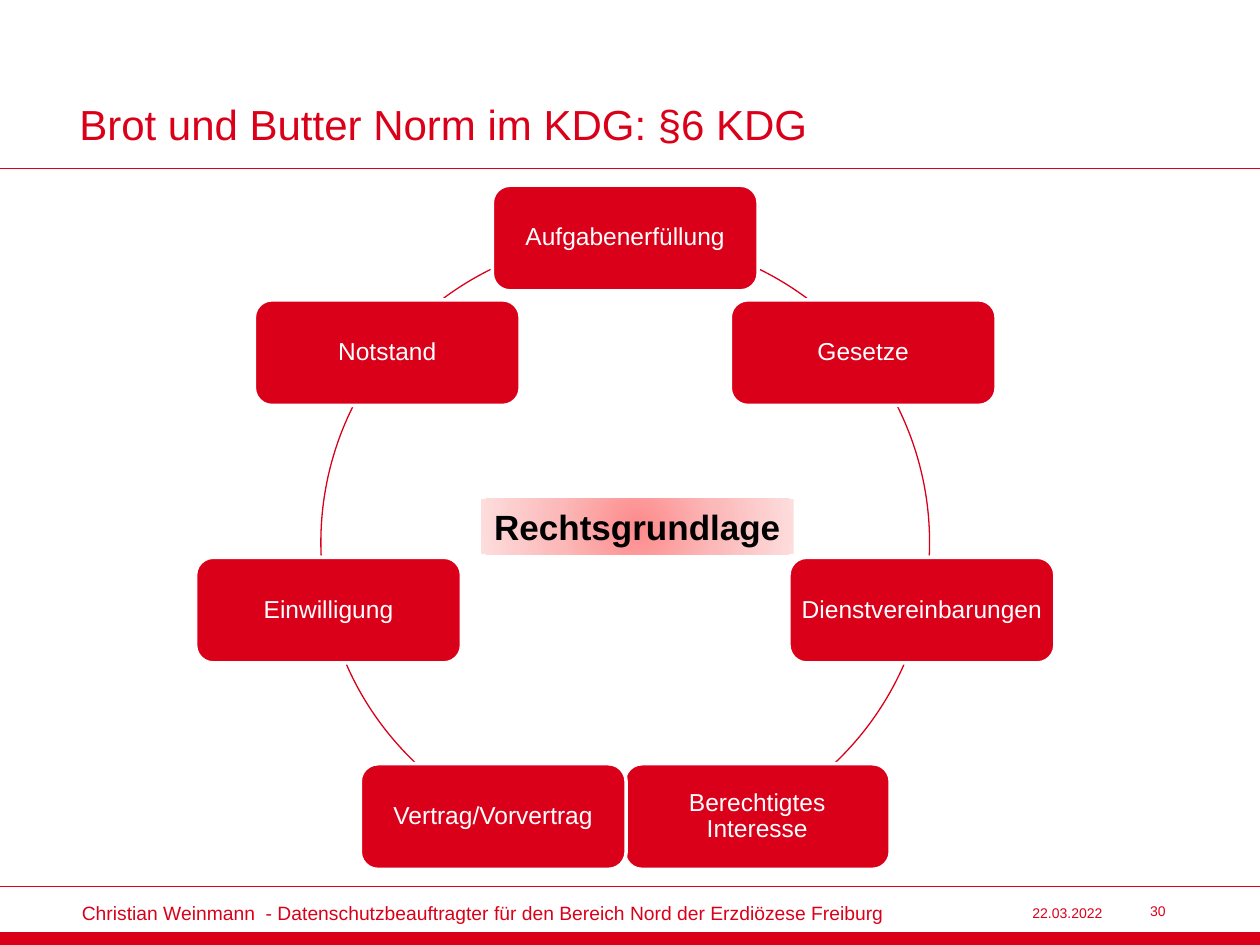
from math import cos, pi, sin

from lxml.etree import SubElement
from pptx import Presentation
from pptx.dml.color import RGBColor
from pptx.enum.shapes import MSO_CONNECTOR, MSO_SHAPE
from pptx.enum.text import MSO_ANCHOR, PP_ALIGN
from pptx.oxml import parse_xml
from pptx.oxml.ns import nsdecls, qn
from pptx.util import Cm, Pt

RED = RGBColor(0xDA, 0x00, 0x1A)
WHITE = RGBColor(0xFF, 0xFF, 0xFF)
BLACK = RGBColor(0x00, 0x00, 0x00)
GLOW = [
    (0, RGBColor(0xFD, 0x8A, 0x8B)),
    (50, RGBColor(0xFC, 0xB9, 0xB9)),
    (100, RGBColor(0xFD, 0xDD, 0xDD)),
]

WIDTH, HEIGHT = 25.4, 19.05
NODE_W, NODE_H = 5.36, 2.13
NODES = [
    "Aufgabenerfüllung",
    "Gesetze",
    "Dienstvereinbarungen",
    "Berechtigtes Interesse",
    "Vertrag/Vorvertrag",
    "Einwilligung",
    "Notstand",
]
RIGHT_ARCS = [(295.9, 306.75), (333.5, 2.5), (23.6, 46.3)]


def write(sp, text, size=14, color=RED, bold=False, align=PP_ALIGN.LEFT,
          anchor=MSO_ANCHOR.MIDDLE, insets=(0.25, 0.13, 0.25, 0.13),
          spacing=None, wrap=True):
    """Fill a shape with one formatted paragraph."""
    tf = sp.text_frame
    tf.word_wrap = wrap
    tf.vertical_anchor = anchor
    tf.margin_left, tf.margin_top, tf.margin_right, tf.margin_bottom = map(Cm, insets)
    p = tf.paragraphs[0]
    p.alignment = align
    p.line_spacing = spacing
    r = p.add_run()
    r.text = text
    r.font.name = "Arial"
    r.font.size = Pt(size)
    r.font.bold = bold
    r.font.color.rgb = color


def add_text(s, box, text, **fmt):
    """Place a text box."""
    write(s.shapes.add_textbox(*map(Cm, box)), text, **fmt)


def add_shape(s, kind, box, fill=None, line=None, weight=0.75):
    """Place a preset shape without a shadow."""
    sp = s.shapes.add_shape(kind, *map(Cm, box))
    sp.shadow.inherit = False
    if fill is None:
        sp.fill.background()
    else:
        sp.fill.solid()
        sp.fill.fore_color.rgb = fill
    if line is None:
        sp.line.fill.background()
    else:
        sp.line.color.rgb = line
        sp.line.width = Pt(weight)
    return sp


def add_rule(s, x, y, w):
    """Draw a thin horizontal red line."""
    c = s.shapes.add_connector(MSO_CONNECTOR.STRAIGHT, Cm(x), Cm(y), Cm(x + w), Cm(y))
    c.line.color.rgb = RED
    c.line.width = Pt(0.75)
    SubElement(c._element.spPr, qn("a:effectLst"))


def add_header(s, x, y, w, h):
    """Place the title above its rule."""
    add_text(s, (x + 1.6, y + 0.5, 19.53, 2.5), "Brot und Butter Norm im KDG: §6 KDG",
             size=24, anchor=MSO_ANCHOR.BOTTOM, insets=(0, 0.13, 0.25, 0))
    add_rule(s, x, y + h, w)


def add_footer(s, x, y, w, h):
    """Place the footer rule, bar, author, date and page number."""
    add_rule(s, x, y, w)
    add_shape(s, MSO_SHAPE.RECTANGLE, (x, y + h - 0.25, w, 0.25), RED, RED)
    add_text(s, (x + 1.65, y + 0.16, 16.54, 0.73),
             "Christian Weinmann  - Datenschutzbeauftragter für den Bereich Nord "
             "der Erzdiözese Freiburg", size=11, insets=(0, 0.13, 0.25, 0.13))
    add_text(s, (x + 18.06, y + 0.24, 4.42, 0.58), "22.03.2022",
             size=8, align=PP_ALIGN.RIGHT)
    add_text(s, (x + 22.48, y + 0.18, 1.27, 0.64), "30",
             size=8, align=PP_ALIGN.RIGHT)


def add_cycle(s, x, y, d):
    """Spread the nodes evenly on a circle and link them with arcs."""
    radius = d / 2
    left_arcs = [(180 - b, 180 - a) for a, b in RIGHT_ARCS]
    for arc in RIGHT_ARCS + left_arcs:
        sp = add_shape(s, MSO_SHAPE.ARC, (x, y, d, d), line=RED)
        for i, angle in enumerate(arc):
            sp.adjustments[i] = angle % 360 * 0.6
    for i, label in enumerate(NODES):
        angle = 2 * pi * i / len(NODES) - pi / 2
        left = x + radius * (1 + cos(angle)) - NODE_W / 2
        top = y + radius * (1 + sin(angle)) - NODE_H / 2
        sp = add_shape(s, MSO_SHAPE.ROUNDED_RECTANGLE, (left, top, NODE_W, NODE_H),
                       RED, WHITE, 2)
        write(sp, label, color=WHITE, align=PP_ALIGN.CENTER,
              insets=(0.15,) * 4, spacing=0.9)


def add_core(s, x, y, w, h):
    """Place the central label on a radial gradient."""
    sp = add_shape(s, MSO_SHAPE.RECTANGLE, (x, y, w, h))
    stops = "".join(f'<a:gs pos="{pos * 1000}"><a:srgbClr val="{color}"/></a:gs>'
                    for pos, color in GLOW)
    grad = parse_xml(
        f'<a:gradFill {nsdecls("a")} rotWithShape="1"><a:gsLst>{stops}</a:gsLst>'
        '<a:path path="circle"><a:fillToRect l="50000" t="50000" r="50000" b="50000"/>'
        '</a:path></a:gradFill>')
    spPr = sp._element.spPr
    spPr.replace(spPr.find(qn("a:noFill")), grad)
    write(sp, "Rechtsgrundlage", size=20, color=BLACK, bold=True,
          align=PP_ALIGN.CENTER, wrap=False)


def main():
    """Build and save the slide."""
    prs = Presentation()
    prs.slide_width, prs.slide_height = Cm(WIDTH), Cm(HEIGHT)
    s = prs.slides.add_slide(prs.slide_layouts[6])
    add_header(s, 0, 0, WIDTH, 3.4)
    add_cycle(s, 6.47, 4.8, 12.27)
    add_core(s, 9.7, 10.06, 6.3, 1.12)
    add_footer(s, 0, 17.87, WIDTH, HEIGHT - 17.87)
    prs.save("out.pptx")


if __name__ == "__main__":
    main()
